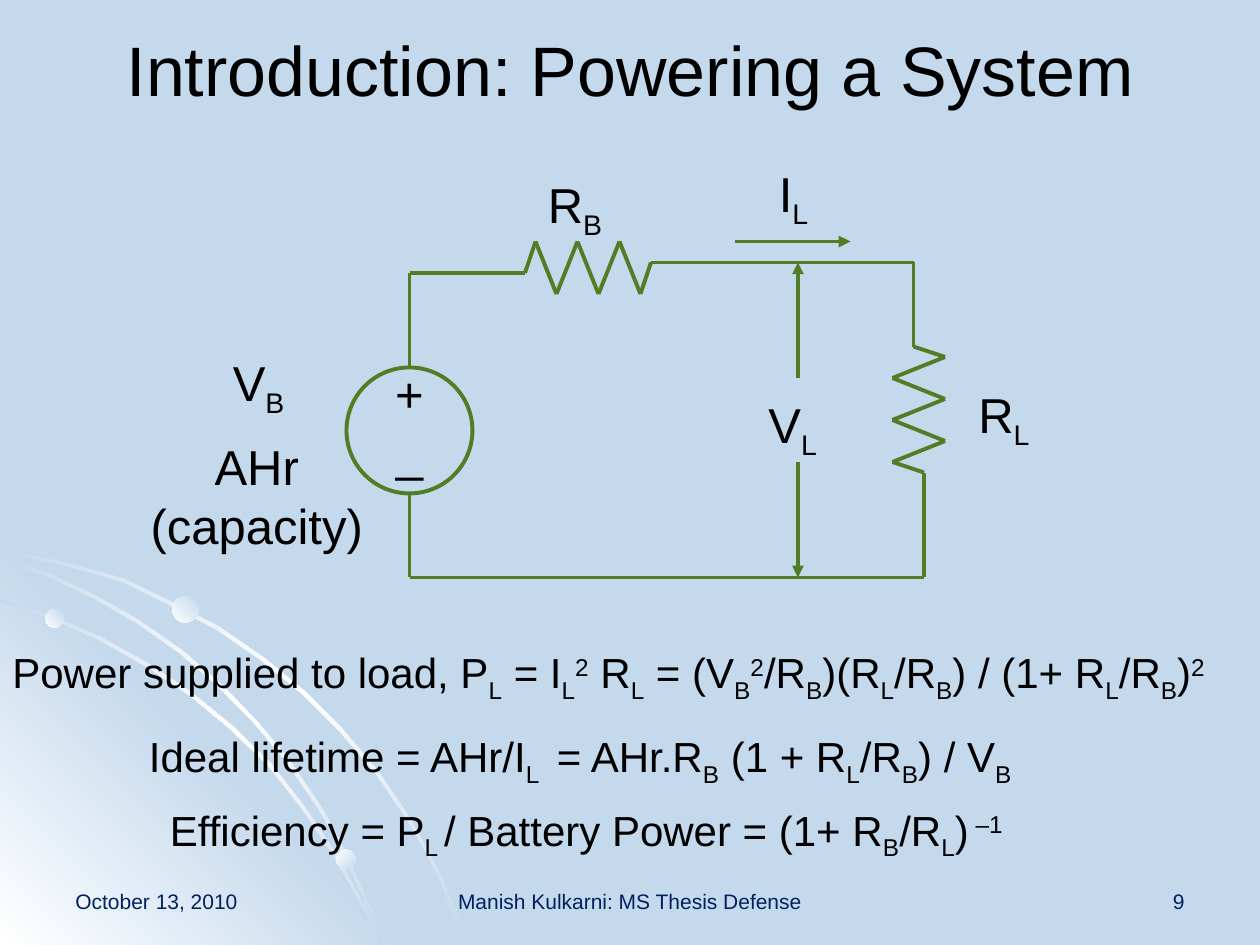
from copy import deepcopy
from itertools import pairwise

from pptx import Presentation
from pptx.dml.color import RGBColor
from pptx.enum import shapes, text
from pptx.oxml import ns, xmlchemy
from pptx.util import Pt

PX = 914400 // 120
SKY = RGBColor(0xC5, 0xD9, 0xED)
WHITE = RGBColor(0xFF, 0xFF, 0xFF)
BLACK = RGBColor(0x00, 0x00, 0x00)
NAVY = RGBColor(0x00, 0x20, 0x60)
GREEN = RGBColor(0x51, 0x7E, 0x24)
LEFT, CENTER, RIGHT = text.PP_ALIGN.LEFT, text.PP_ALIGN.CENTER, text.PP_ALIGN.RIGHT
BASELINES = {"~": "-25000", "^": "30000"}
RISING, FALLING = 45, 315


def px(*lengths):
    """Turn px lengths into EMU."""
    return [length * PX for length in lengths]


def style(paragraph, size, color, align):
    """Set font and alignment of a paragraph."""
    font = paragraph.font
    font.name, font.size, font.color.rgb = "Arial", Pt(size), color
    paragraph.alignment = align


def add_text(slide, box, lines, size=28, color=BLACK, align=LEFT, wrap=False, grow=True):
    """Add lines whose |-separated pieces are lowered by ~ or raised by ^."""
    frame = slide.shapes.add_textbox(*px(*box)).text_frame
    frame.word_wrap = wrap
    if grow:
        frame.auto_size = text.MSO_AUTO_SIZE.SHAPE_TO_FIT_TEXT
    for index, line in enumerate(lines):
        paragraph = frame.add_paragraph() if index else frame.paragraphs[0]
        style(paragraph, size, color, align)
        for piece in line.split("|"):
            run = paragraph.add_run()
            run.text = piece.lstrip("~^")
            if piece[0] in BASELINES:
                run._r.get_or_add_rPr().set("baseline", BASELINES[piece[0]])


def shade(shape, colors, angle):
    """Fill a shape with two or three evenly spaced gradient colours."""
    shape.shadow.inherit = False
    shape.line.fill.background()
    shape.fill.gradient()
    shape.fill.gradient_angle = angle
    stop_list = shape._element.spPr.find(".//" + ns.qn("a:gsLst"))
    if len(colors) == 3:
        stop_list.insert(1, deepcopy(stop_list[0]))
    for index, (stop, color) in enumerate(zip(shape.fill.gradient_stops, colors)):
        stop.color.rgb = color
        stop.position = index / (len(colors) - 1)


def add_outline(slide, points):
    """Add a closed freeform through px points."""
    builder = slide.shapes.build_freeform(*points[0], scale=PX)
    builder.add_line_segments(points[1:], close=True)
    return builder.convert_to_shape()


def decoration(slide, left, top, width, height):
    """Draw the corner glow, its curved ribbons and beads."""
    bottom = top + height
    glow = add_outline(slide, [(left + width, bottom), (left, bottom), (left, top)])
    shade(glow, [WHITE, SKY, WHITE], RISING)

    outer_curve = [
        (0, 9), (34, 16), (68, 24), (118, 38), (163, 60), (209, 84), (251, 113), (290, 145),
        (326, 181), (360, 221), (390, 265), (407, 295), (422, 325), (434, 355), (446, 386)]
    middle_curve = [
        (0, 17), (47, 33), (91, 54), (133, 78), (173, 106), (210, 138), (245, 174),
        (275, 210), (305, 254), (323, 285), (338, 318), (353, 351), (364, 386)]
    inner_curve = [
        (0, 57), (49, 73), (95, 93), (140, 118), (182, 146), (221, 178), (258, 214),
        (290, 255), (319, 298), (343, 341), (355, 363), (364, 386)]
    for curve in (outer_curve, inner_curve, middle_curve):
        upper_edge = [(left + x, top + y) for x, y in curve]
        lower_edge = [(max(x - 2, left), min(y + 3, bottom)) for x, y in reversed(upper_edge)]
        shade(add_outline(slide, upper_edge + lower_edge), [SKY, WHITE, SKY], FALLING)

    for x, y, size, angle in [(43, 67, 18, RISING), (320, 296, 19, FALLING),
                              (164, 55, 25, RISING)]:
        bead = slide.shapes.add_shape(
            shapes.MSO_SHAPE.OVAL, *px(left + x, top + y, size, size))
        shade(bead, [WHITE, SKY], angle)


def add_wire(slide, points, arrow=False):
    """Join px points by straight lines, with an arrowhead on request."""
    for start, end in pairwise(points):
        wire = slide.shapes.add_connector(shapes.MSO_CONNECTOR.STRAIGHT, *px(*start, *end))
        wire.line.color.rgb, wire.line.width = GREEN, Pt(2.25)
        properties = wire._element.spPr
        if arrow:
            head = xmlchemy.OxmlElement("a:tailEnd")
            head.set("type", "triangle")
            properties.get_or_add_ln().append(head)
        properties.append(xmlchemy.OxmlElement("a:effectLst"))


def zigzag(start, near, far, turns=6, pitch=20):
    """List (along, across) turns of a resistor, alternating near and far."""
    return [(start + pitch * turn, far if turn % 2 else near) for turn in range(turns)]


def circuit(slide, left, top):
    """Draw the battery, both resistors, the wires and their labels."""
    source_x, load_x, return_x = left + 260, left + 740, left + 750
    load_top, return_y = top + 100, top + 400
    battery_top, battery_size = top + 200, 120

    battery = slide.shapes.add_shape(shapes.MSO_SHAPE.OVAL, *px(
        source_x - battery_size // 2, battery_top, battery_size, battery_size))
    battery.shadow.inherit = False
    battery.fill.background()
    battery.line.color.rgb, battery.line.width = GREEN, Pt(2.25)

    battery_resistor = zigzag(left + 380, near=top + 80, far=top + 130)
    load_resistor = [(x, y) for y, x in zigzag(top + 190, near=left + 770, far=left + 720)]
    add_wire(slide, [
        (source_x, battery_top), (source_x, top + 110), (left + 370, top + 110),
        *battery_resistor,
        (left + 490, load_top), (load_x, load_top), (load_x, top + 180),
        *load_resistor,
        (return_x, top + 300), (return_x, return_y), (source_x, return_y),
        (source_x, battery_top + battery_size)])

    voltage_x, current_y = left + 630, top + 80
    add_wire(slide, [(voltage_x, top + 210), (voltage_x, load_top)], arrow=True)
    add_wire(slide, [(voltage_x, top + 290), (voltage_x, return_y)], arrow=True)
    add_wire(slide, [(left + 570, current_y), (left + 680, current_y)], arrow=True)

    for x, y, width, quantity in [(80, 180, 77, "V|~B"), (380, 10, 79, "R|~B"),
                                  (590, 220, 73, "V|~L"), (790, 210, 76, "R|~L"),
                                  (600, 0, 55, "I|~L")]:
        add_text(slide, (left + x, top + y, width, 68), [quantity])
    add_text(slide, (source_x - 30, top + 190, 60, 125), ["+", "_"], align=CENTER, wrap=True)
    add_text(slide, (left, top + 260, 229, 125), ["AHr", "(capacity)"], align=CENTER)


def equations(slide, left, top):
    """Place the three formulas below the circuit."""
    load_ratio = "R|~L|/R|~B|"
    power = ("Power supplied to load, P|~L| = I|~L|^2| R|~L| = (V|~B|^2|/R|~B|)("
             f"{load_ratio}) / (1+ {load_ratio})|^2")
    lifetime = f"Ideal lifetime = AHr/I|~L | = AHr.R|~B| (1 + {load_ratio}) / V|~B"
    efficiency = "Efficiency = P|~L |/ Battery Power = (1+ R|~B|/R|~L|)|^ –1"
    for x, y, width, formula, wrap in [(0, 0, 1200, power, True),
                                       (130, 80, 865, lifetime, False),
                                       (150, 150, 844, efficiency, False)]:
        add_text(slide, (left + x, top + y, width, 61), [formula], 24, wrap=wrap)


def footer(slide, left, top):
    """Place date, talk and page number."""
    for x, width, words, align in [(0, 280, "October 13, 2010", LEFT),
                                   (350, 380, "Manish Kulkarni: MS Thesis Defense", CENTER),
                                   (800, 280, "9", RIGHT)]:
        add_text(slide, (left + x, top, width, 60), [words], size=12, color=NAVY,
                 align=align, wrap=True, grow=False)


def heading(slide, box):
    """Move and format the title placeholder."""
    title = slide.shapes.title
    title.left, title.top, title.width, title.height = px(*box)
    title.text_frame.text = "Introduction: Powering a System"
    title.text_frame.vertical_anchor = text.MSO_ANCHOR.MIDDLE
    style(title.text_frame.paragraphs[0], 40, BLACK, CENTER)


def main():
    """Build and save the slide."""
    deck = Presentation()
    deck.slide_width, deck.slide_height = px(1200, 900)
    slide = deck.slides.add_slide(deck.slide_layouts[5])
    slide.background.fill.solid()
    slide.background.fill.fore_color.rgb = SKY
    decoration(slide, 0, 513, 386, 387)
    heading(slide, (60, -10, 1080, 150))
    footer(slide, 60, 840)
    circuit(slide, 130, 150)
    equations(slide, 0, 610)
    deck.save("out.pptx")


if __name__ == "__main__":
    main()
